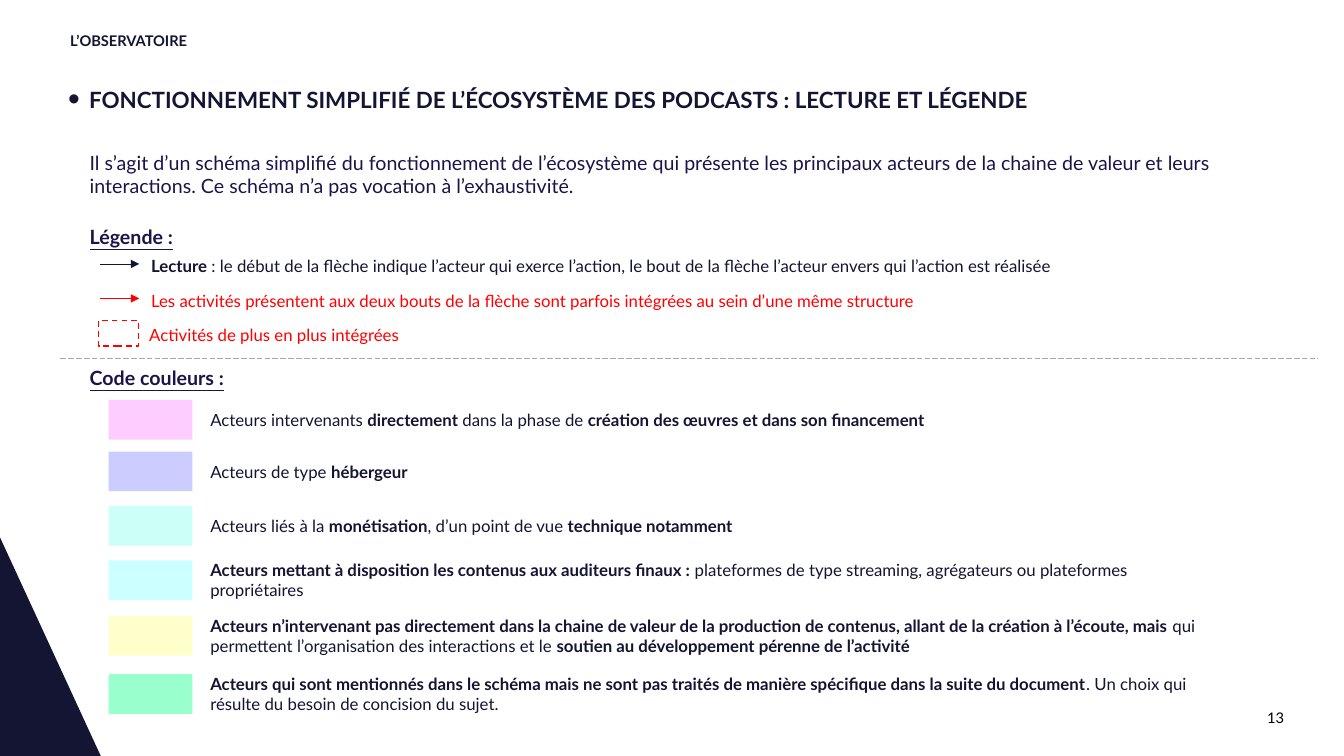
from lxml.etree import SubElement
from pptx import Presentation
from pptx.dml.color import RGBColor
from pptx.enum.dml import MSO_LINE
from pptx.enum.shapes import MSO_CONNECTOR, MSO_SHAPE
from pptx.enum.text import MSO_ANCHOR, PP_ALIGN
from pptx.oxml.ns import qn
from pptx.util import Cm, Pt

FONT = "Lato"
COLORS = {
    "navy": "141433",
    "violet": "1E1348",
    "red": "FF0000",
    "black": "000000",
    "grey": "A6A6A6",
    "pink": "FFCCFF",
    "lavender": "CCCCFF",
    "mint": "CCFFF5",
    "sky": "CCFFFF",
    "cream": "FFFFCC",
    "green": "99FFCC",
}
DEFAULT_INSETS = (0.25, 0.13, 0.25, 0.13)
COLOR_CODES = [
    (10.08, "pink", "Acteurs intervenants *directement* dans la phase de "
     "*création des œuvres et dans son financement*"),
    (11.38, "lavender", "Acteurs de type *hébergeur*"),
    (12.75, "mint", "Acteurs liés à la *monétisation*, d’un point de vue *technique notamment*"),
    (14.12, "sky", "*Acteurs mettant à disposition les contenus aux auditeurs finaux : *"
     "plateformes de type streaming, agrégateurs ou plateformes propriétaires"),
    (15.52, "cream", "*Acteurs n’intervenant pas directement dans la chaine de valeur de la "
     "production de contenus, allant de la création à l’écoute, mais *qui permettent "
     "l’organisation des interactions et le *soutien au développement pérenne de l’activité*"),
    (16.99, "green", "*Acteurs qui sont mentionnés dans le schéma mais ne sont pas traités de "
     "manière spécifique dans la suite du document*. Un choix qui résulte du besoin de "
     "concision du sujet."),
]


def color(name):
    return RGBColor.from_string(COLORS[name])


def add_text(page, area, text, size, ink, underline=False,
             insets=DEFAULT_INSETS, anchor=MSO_ANCHOR.MIDDLE):
    box = page.shapes.add_textbox(*(Cm(length) for length in area))
    frame = box.text_frame
    frame.word_wrap = True
    frame.vertical_anchor = anchor
    frame.margin_left, frame.margin_top, frame.margin_right, frame.margin_bottom = (
        Cm(inset) for inset in insets)
    para = frame.paragraphs[0]
    for index, part in enumerate(text.split("*")):
        if part:
            span = para.add_run()
            span.text = part
            span.font.name = FONT
            span.font.size = Pt(size)
            span.font.bold = index % 2 == 1
            span.font.underline = underline
            span.font.color.rgb = color(ink)
    return para


def add_bullet(para, indent, percent):
    properties = para._p.get_or_add_pPr()
    properties.set("marL", str(Cm(indent)))
    properties.set("indent", str(-Cm(indent)))
    SubElement(properties, qn("a:buSzPct")).set("val", str(percent * 1000))
    SubElement(properties, qn("a:buFont")).set("typeface", "Arial")
    SubElement(properties, qn("a:buChar")).set("char", "•")


def add_rectangle(page, area, fill=None):
    box = page.shapes.add_shape(MSO_SHAPE.RECTANGLE, *(Cm(length) for length in area))
    box.shadow.inherit = False
    if fill:
        box.fill.solid()
        box.fill.fore_color.rgb = color(fill)
        box.line.fill.background()
    else:
        box.fill.background()
        box.line.color.rgb = color("red")
        box.line.width = Pt(1)
        box.line.dash_style = MSO_LINE.DASH


def add_line(page, left, right, top, ink, dash=None, arrow=False):
    line = page.shapes.add_connector(
        MSO_CONNECTOR.STRAIGHT, Cm(left), Cm(top), Cm(right), Cm(top))
    line.line.color.rgb = color(ink)
    line.line.width = Pt(0.5)
    if dash:
        line.line.dash_style = dash
    if arrow:
        SubElement(line.line._get_or_add_ln(), qn("a:tailEnd")).set("type", "triangle")
    SubElement(line._element.spPr, qn("a:effectLst"))


def add_corner(page):
    builder = page.shapes.build_freeform(0, Cm(19.05))
    builder.add_line_segments([(Cm(2.54), Cm(19.05)), (0, Cm(13.54))])
    corner = builder.convert_to_shape()
    corner.shadow.inherit = False
    corner.fill.solid()
    corner.fill.fore_color.rgb = color("navy")
    corner.line.fill.background()


def add_header(page):
    para = add_text(page, (1.52, 0.86, 15.01, 0.41), "*L’OBSERVATOIRE*", 10.5, "navy",
                    insets=(0.25, 0, 0.25, 0))
    para.line_spacing = 0.9
    heading = add_text(
        page, (1.52, 2.03, 32.82, 0.94),
        "*FONCTIONNEMENT SIMPLIFIÉ DE L’ÉCOSYSTÈME DES PODCASTS : LECTURE ET LÉGENDE*",
        16, "navy", insets=(0.2, 0.13, 0.25, 0.13), anchor=MSO_ANCHOR.TOP)
    add_bullet(heading, 0.53, 150)
    add_text(page, (2.01, 3.38, 30.35, 2.03),
             "Il s’agit d’un schéma simplifié du fonctionnement de l’écosystème qui présente "
             "les principaux acteurs de la chaine de valeur et leurs interactions. Ce schéma "
             "n’a pas vocation à l’exhaustivité.", 14, "violet")


def add_legend(page):
    add_text(page, (2.01, 5.59, 4.37, 0.76), "*Légende :*", 14, "violet", underline=True)
    add_line(page, 2.51, 3.51, 6.65, "navy", arrow=True)
    add_text(page, (3.56, 6.27, 26.19, 0.84),
             "*Lecture* : le début de la flèche indique l’acteur qui exerce l’action, le bout "
             "de la flèche l’acteur envers qui l’action est réalisée", 12, "navy")
    add_line(page, 2.51, 3.51, 7.52, "red", arrow=True)
    add_text(page, (3.56, 7.04, 26.19, 1.09),
             "Les activités présentent aux deux bouts de la flèche sont parfois intégrées "
             "au sein d’une même structure", 12, "red")
    add_rectangle(page, (2.49, 8.08, 1, 0.64))
    add_text(page, (3.51, 8.13, 26.19, 0.61), "Activités de plus en plus intégrées", 12, "red")
    add_line(page, 1.52, 33.22, 9.04, "grey", dash=MSO_LINE.LONG_DASH)


def add_color_codes(page):
    add_text(page, (2.01, 9.04, 5.64, 0.97), "*Code couleurs :*", 14, "violet", underline=True)
    for top, fill, text in COLOR_CODES:
        add_rectangle(page, (2.74, top, 2.11, 1), fill)
        add_text(page, (5.05, top, 25.81, 1), text, 12, "navy")


def main():
    deck = Presentation()
    deck.slide_width, deck.slide_height = Cm(33.87), Cm(19.05)
    page = deck.slides.add_slide(deck.slide_layouts[6])
    add_corner(page)
    add_header(page)
    add_legend(page)
    add_color_codes(page)
    number = add_text(page, (24.74, 17.86, 7.62, 0.46), "13", 10.5, "black",
                      insets=(0, 0, 0, 0))
    number.alignment = PP_ALIGN.RIGHT
    deck.save("out.pptx")


if __name__ == "__main__":
    main()
